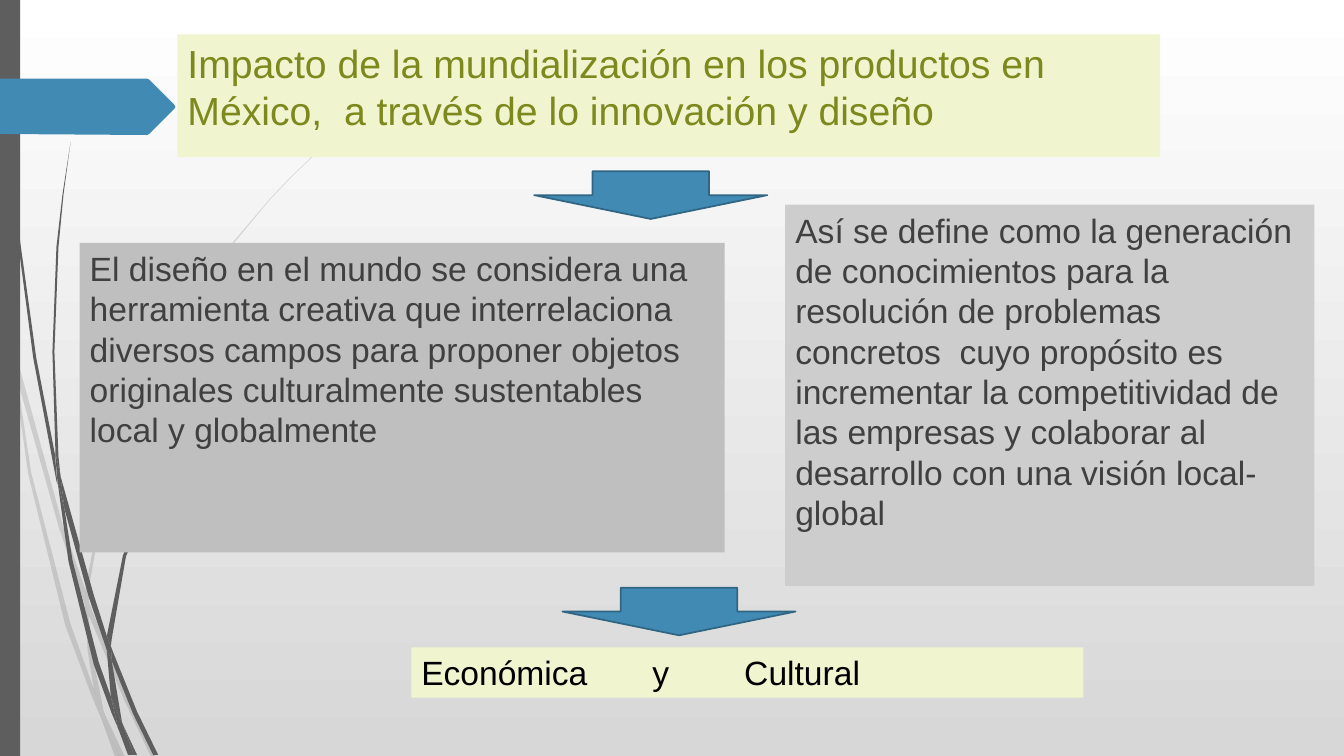
from lxml import etree
from pptx import Presentation
from pptx.dml.color import RGBColor
from pptx.enum.shapes import MSO_SHAPE
from pptx.enum.text import MSO_ANCHOR, MSO_AUTO_SIZE, PP_ALIGN
from pptx.oxml.ns import qn
from pptx.util import Pt

WHITE = RGBColor(0xFF, 0xFF, 0xFF)
BLACK = RGBColor(0x00, 0x00, 0x00)
MIST = RGBColor(0xD7, 0xD7, 0xD7)
GRAPHITE = RGBColor(0x5E, 0x5E, 0x5E)
BLUE = RGBColor(0x41, 0x8A, 0xB3)
DARK_BLUE = RGBColor(0x30, 0x66, 0x84)
LIME = RGBColor(0xF0, 0xF5, 0xD0)
OLIVE = RGBColor(0x7D, 0x89, 0x1D)
SILVER = RGBColor(0xBF, 0xBF, 0xBF)
LIGHT_GRAY = RGBColor(0xCD, 0xCD, 0xCD)
TEXT_GRAY = RGBColor(0x40, 0x40, 0x40)

FONT = "Arial"
OUTLINE_UNIT = Pt(0.72)  # outlines are plotted in hundredths of an inch

PALE_STRANDS = [
    [(11, 350), (9, 322), (0, 282), (0, 299), (10, 344)],
    [(58, 522), (84, 599), (85, 586), (62, 520), (14, 345), (17, 376)],
    [(92, 607), (88, 596), (88, 610), (123, 694), (150, 751), (155, 751), (127, 692)],
    [(119, 751), (124, 751), (105, 711)],
    [(93, 683), (70, 619), (31, 469), (17, 376), (11, 350), (28, 470), (65, 621),
     (92, 693), (101, 714), (99, 707)],
    [(84, 599), (87, 646), (93, 683), (96, 692), (105, 711), (103, 706), (91, 646),
     (88, 610), (88, 608)],
    [(88, 584), (110, 462), (160, 349), (229, 245), (268, 198), (290, 175), (312, 154),
     (312, 153), (289, 175), (268, 197), (228, 244), (158, 348), (107, 461), (85, 584),
     (85, 586), (88, 596)],
    [(101, 714), (114, 751), (119, 751)],
    [(88, 608), (88, 610), (88, 596), (85, 586), (84, 599)],
    [(96, 692), (93, 683), (99, 707), (101, 714), (119, 751), (105, 711)],
]

DARK_STRANDS = [
    [(7, 110), (17, 233), (33, 355), (56, 477), (57, 481), (55, 457), (55, 453),
     (36, 355), (19, 232), (8, 109), (5, 48), (4, 0), (3, 0), (4, 48)],
    [(88, 592), (106, 645), (106, 633), (106, 631), (93, 590), (60, 472), (64, 505)],
    [(113, 649), (110, 641), (111, 656), (132, 708), (152, 749), (157, 749), (136, 706)],
    [(110, 691), (98, 657), (72, 556), (64, 505), (57, 477), (68, 557), (93, 659),
     (111, 708), (117, 722), (116, 717)],
    [(60, 472), (58, 453), (54, 349), (58, 245), (63, 193), (70, 141), (62, 193),
     (56, 245), (52, 349), (55, 449)],
    [(133, 749), (136, 749), (122, 719)],
    [(57, 477), (64, 505), (60, 472), (55, 449), (55, 453)],
    [(111, 633), (125, 552), (158, 476), (205, 406), (231, 374), (245, 359), (261, 344),
     (260, 344), (245, 358), (231, 373), (204, 405), (156, 474), (122, 551), (106, 631),
     (110, 641)],
    [(117, 722), (127, 749), (131, 749)],
    [(106, 645), (110, 691), (116, 706), (122, 719), (121, 716), (111, 656), (109, 651)],
    [(106, 645), (109, 651), (111, 656), (110, 641), (106, 631), (106, 633)],
    [(116, 706), (110, 691), (116, 717), (117, 722), (130, 749), (133, 749), (122, 719)],
]

PENNANT = [(0, 78), (146, 78), (148, 79), (173, 104), (174, 106), (173, 108),
           (148, 133), (146, 134), (0, 133)]


def paint(shape, color):
    shape.shadow.inherit = False
    shape.fill.solid()
    shape.fill.fore_color.rgb = color
    shape.line.fill.background()


def add_outline(page, points, color, opacity=None):
    """Draw a closed filled outline; opacity is a percentage."""
    builder = page.shapes.build_freeform(*points[0], scale=OUTLINE_UNIT)
    builder.add_line_segments(points[1:], close=True)
    shape = builder.convert_to_shape()
    paint(shape, color)
    if opacity is not None:
        fill_color = shape.element.spPr.find(qn("a:solidFill")).find(qn("a:srgbClr"))
        etree.SubElement(fill_color, qn("a:alpha"), val=str(opacity * 1000))


def place(shape, left, top, width, height):
    shape.left, shape.top = Pt(left), Pt(top)
    shape.width, shape.height = Pt(width), Pt(height)


def write(shape, text, size, color):
    frame = shape.text_frame
    frame.word_wrap = True
    frame.auto_size = MSO_AUTO_SIZE.NONE
    frame.vertical_anchor = MSO_ANCHOR.TOP
    para = frame.paragraphs[0]
    para.text = text
    para.alignment = PP_ALIGN.LEFT
    para.space_before = Pt(0)
    para.font.name = FONT
    para.font.size = Pt(size)
    para.font.color.rgb = color


def fill_placeholder(page, holder, bounds, text, size, color, background):
    """Format a placeholder and bring it in front of the decoration."""
    place(holder, *bounds)
    paint(holder, background)
    properties = holder.text_frame.paragraphs[0]._p.get_or_add_pPr()
    properties.set("marL", "0")
    properties.set("indent", "0")
    etree.SubElement(properties, qn("a:buNone"))
    write(holder, text, size, color)
    page.shapes.element.append(holder.element)


def add_tabbed_box(page, bounds, text, tab_stops):
    box = page.shapes.add_textbox(*map(Pt, bounds))
    paint(box, LIME)
    properties = box.text_frame.paragraphs[0]._p.get_or_add_pPr()
    tabs = etree.SubElement(properties, qn("a:tabLst"))
    for stop in tab_stops:
        etree.SubElement(tabs, qn("a:tab"), pos=str(Pt(stop)), algn="l")
    write(box, text, 24, BLACK)
    box.text_frame.auto_size = MSO_AUTO_SIZE.SHAPE_TO_FIT_TEXT


def add_down_arrow(page, left, top):
    arrow = page.shapes.add_shape(MSO_SHAPE.DOWN_ARROW, Pt(left), Pt(top), Pt(166.5), Pt(34))
    paint(arrow, BLUE)
    arrow.line.color.rgb = DARK_BLUE
    arrow.line.width = Pt(1.25)


def add_decoration(page):
    fill = page.background.fill
    fill.gradient()
    fill.gradient_angle = 270
    for stop, color in zip(fill.gradient_stops, (WHITE, MIST)):
        stop.color.rgb = color
    for strand in PALE_STRANDS:
        add_outline(page, strand, GRAPHITE, opacity=20)
    for strand in DARK_STRANDS:
        add_outline(page, strand, GRAPHITE)
    side_bar = page.shapes.add_shape(MSO_SHAPE.RECTANGLE, 0, 0, Pt(14.4), Pt(540))
    paint(side_bar, GRAPHITE)
    add_outline(page, PENNANT, BLUE)


def main():
    deck = Presentation()
    deck.slide_width, deck.slide_height = Pt(960), Pt(540)
    page = deck.slides.add_slide(deck.slide_layouts.get_by_name("Two Content"))
    title, design, innovation = page.placeholders
    add_decoration(page)
    fill_placeholder(
        page, title, (126.7, 24.5, 702, 87.8),
        "Impacto de la mundialización en los productos en México,  a través de lo "
        "innovación y diseño", 28, OLIVE, LIME)
    fill_placeholder(
        page, design, (56.9, 173.5, 460.8, 221),
        "El diseño en el mundo se considera una herramienta creativa que interrelaciona "
        "diversos campos para proponer objetos originales culturalmente sustentables "
        "local y globalmente", 24, TEXT_GRAY, SILVER)
    fill_placeholder(
        page, innovation, (560.9, 146.2, 378, 272.2),
        "Así se define como la generación de conocimientos para la resolución de problemas "
        "concretos  cuyo propósito es incrementar la competitividad de las empresas y "
        "colaborar al desarrollo con una visión local-global", 24, TEXT_GRAY, LIGHT_GRAY)
    add_tabbed_box(page, (293.8, 462.4, 480, 36), "Económica\ty\tCultural", (165, 230.7))
    add_down_arrow(page, 381.6, 122.4)
    add_down_arrow(page, 401.8, 419.8)
    deck.save("out.pptx")


if __name__ == "__main__":
    main()
